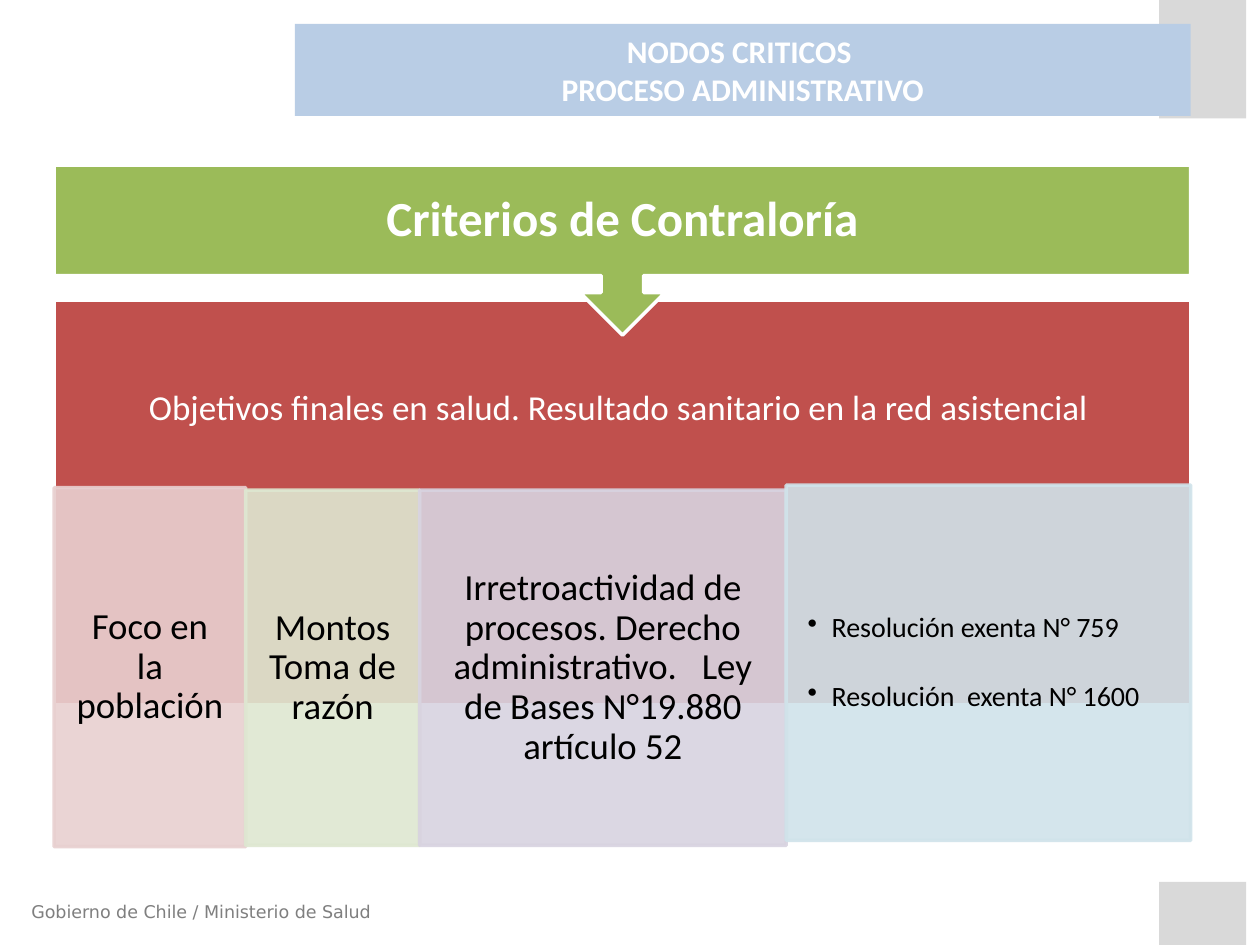
from lxml import etree
from pptx import Presentation, util as u
from pptx.dml.color import RGBColor
from pptx.enum import shapes, text
from pptx.oxml.ns import qn

COLORS = {"white": "FFFFFF", "black": "000000", "corner": "D9D9D9", "gray": "7F7F7F",
          "header": "B9CDE5", "green": "9BBB59", "red": "C0504D", "pink": "E8D0D0",
          "lime": "DEE7D1", "lilac": "D8D3E0", "sky": "D0E3EA"}

HEADER = ["NODOS CRITICOS ", "PROCESO ADMINISTRATIVO"]
CRITERIA = "Criterios de Contraloría"
GOAL = "Objetivos finales en salud. Resultado sanitario en la red asistencial "
FOOTER = "Gobierno de Chile / Ministerio de Salud"
# colour, width, top, height, paragraphs, bulleted
COLUMNS = [
    ("pink", 1.52, 3.87, 2.85, ["Foco en la población"], False),
    ("lime", 1.38, 3.89, 2.82, ["Montos Toma de razón"], False),
    ("lilac", 2.91, 3.89, 2.82,
     ["Irretroactividad de procesos. Derecho administrativo.   Ley de Bases N°19.880 artículo 52"],
     False),
    ("sky", 3.21, 3.85, 2.82, ["Resolución exenta N° 759", "Resolución  exenta N° 1600"], True),
]
CORNERS = [(9.2, 0, 0.69, 0.94), (9.2, 7, 0.69, 0.5)]
LEFT, WIDTH = 0.43, 9.02


def rgb(name):
    return RGBColor.from_string(COLORS[name])


def add_block(slide, box, fill, line=None, kind=shapes.MSO_SHAPE.RECTANGLE):
    shape = slide.shapes.add_shape(kind, *map(u.Inches, box))
    shape.shadow.inherit = False
    shape.fill.solid()
    shape.fill.fore_color.rgb = rgb(fill)
    if line:
        shape.line.color.rgb = rgb(line)
        shape.line.width = u.Pt(2)
    else:
        shape.line.fill.background()
    return shape


def write(shape, lines, size, color, bold=False, insets=(0.1, 0.05, 0.1, 0.05),
          spacing=0.9, align=text.PP_ALIGN.CENTER, font="Calibri"):
    frame = shape.text_frame
    frame.word_wrap = True
    frame.auto_size = text.MSO_AUTO_SIZE.NONE
    frame.vertical_anchor = text.MSO_ANCHOR.MIDDLE
    (frame.margin_left, frame.margin_top,
     frame.margin_right, frame.margin_bottom) = map(u.Inches, insets)
    for index, line in enumerate(lines):
        paragraph = frame.add_paragraph() if index else frame.paragraphs[0]
        paragraph.alignment = align
        paragraph.line_spacing = spacing
        paragraph.space_before = u.Pt(0)
        run = paragraph.add_run()
        run.text = line
        run.font.name = font
        run.font.size = u.Pt(size)
        run.font.bold = bold
        run.font.color.rgb = rgb(color)


def make_translucent(shape, percent):
    """Apply the opacity to both fill and outline."""
    for color in shape._element.spPr.iter(qn("a:srgbClr")):
        etree.SubElement(color, qn("a:alpha"), val=str(percent * 1000))


def add_bullets(shape, indent=0.19, gap=22):
    for index, paragraph in enumerate(shape.text_frame.paragraphs):
        paragraph.space_before = u.Pt(gap if index else 0)
        properties = paragraph._p.get_or_add_pPr()
        properties.set("marL", str(u.Inches(indent)))
        properties.set("indent", str(-u.Inches(indent)))
        etree.SubElement(properties, qn("a:buChar"), char="•")


def add_header(slide):
    title = slide.shapes.title
    title.left, title.top, title.width, title.height = map(u.Inches, (2.34, 0.19, 7.11, 0.73))
    title.fill.solid()
    title.fill.fore_color.rgb = rgb("header")
    write(title, HEADER, 18, "white", bold=True, spacing=1.0)
    slide.shapes._spTree.append(title._element)  # in front of the corner block


def add_footer(slide):
    footer = slide.shapes.add_textbox(*map(u.Inches, (0.15, 7.1, 3.02, 0.27)))
    write(footer, [FOOTER], 10, "gray", spacing=1.0,
          align=text.PP_ALIGN.LEFT, font="DejaVu Sans")


def add_diagram(slide):
    goal = add_block(slide, (LEFT, 2.38, WIDTH, 3.21), "red", "white")
    write(goal, [GOAL], 20, "white", insets=(0.16, 0.16, 0.16, 1.64))

    left = LEFT
    for color, width, top, height, lines, bulleted in COLUMNS:
        column = add_block(slide, (left, top, width, height), color, color)
        make_translucent(column, 90)
        write(column, lines, 16 if bulleted else 21, "black", insets=(0.17, 0.03, 0.17, 0.03),
              align=text.PP_ALIGN.LEFT if bulleted else text.PP_ALIGN.CENTER)
        if bulleted:
            add_bullets(column)
        left += width

    criteria = add_block(slide, (LEFT, 1.31, WIDTH, 1.35), "green", "white",
                         shapes.MSO_SHAPE.DOWN_ARROW_CALLOUT)
    write(criteria, [CRITERIA], 28, "white", bold=True, insets=(0.22, 0.2, 0.22, 0.2))


def main():
    presentation = Presentation()
    presentation.slide_width, presentation.slide_height = u.Inches(10), u.Inches(7.5)
    slide = presentation.slides.add_slide(presentation.slide_layouts.get_by_name("Title Only"))
    for corner in CORNERS:
        add_block(slide, corner, "corner")
    add_footer(slide)
    add_diagram(slide)
    add_header(slide)
    presentation.save("out.pptx")


if __name__ == "__main__":
    main()
